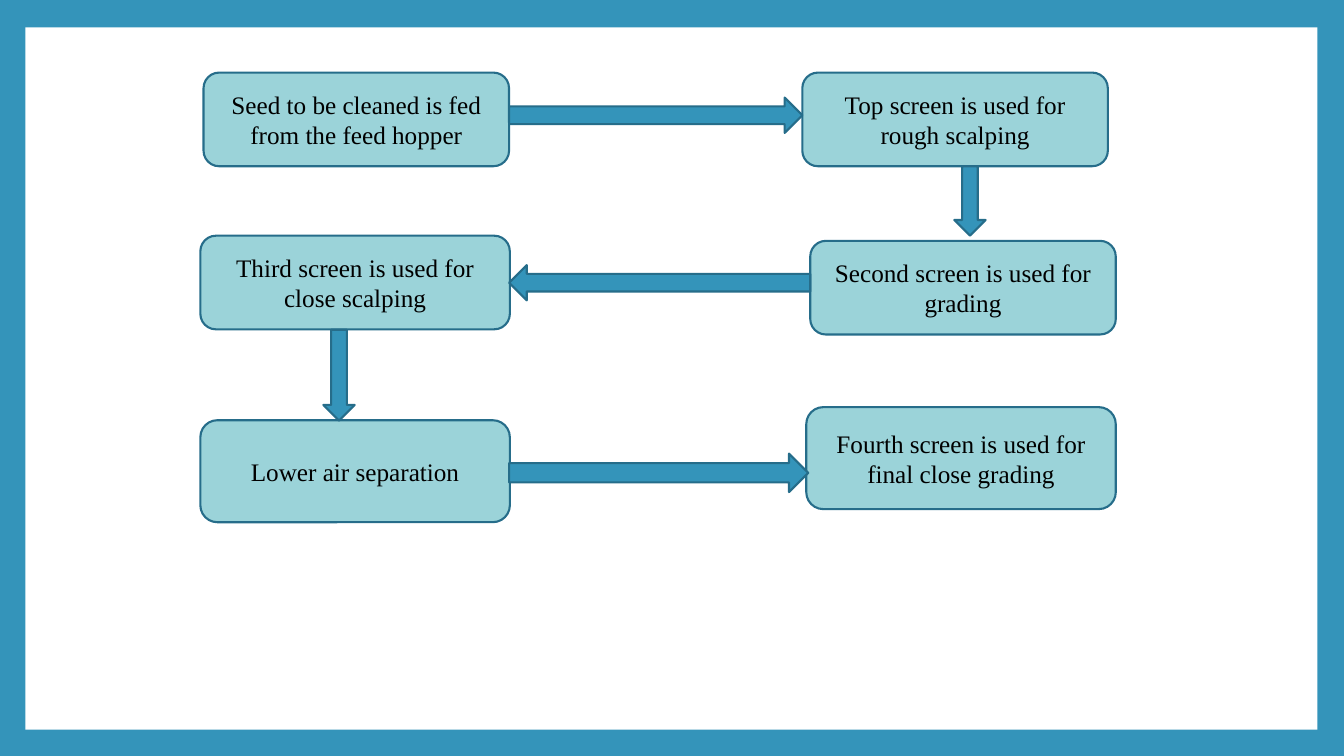
from dataclasses import dataclass

from pptx import Presentation
from pptx.dml.color import RGBColor
from pptx.enum.shapes import MSO_SHAPE
from pptx.enum.text import MSO_ANCHOR, PP_ALIGN
from pptx.util import Cm, Pt

RECTANGLE = MSO_SHAPE.RECTANGLE
ROUNDED = MSO_SHAPE.ROUNDED_RECTANGLE
RIGHT = MSO_SHAPE.RIGHT_ARROW
LEFT = MSO_SHAPE.LEFT_ARROW
DOWN = MSO_SHAPE.DOWN_ARROW
MIDDLE = MSO_ANCHOR.MIDDLE
CENTER = PP_ALIGN.CENTER


@dataclass(frozen=True)
class Theme:
    frame: RGBColor = RGBColor(0x34, 0x94, 0xBA)
    panel: RGBColor = RGBColor(0xFF, 0xFF, 0xFF)
    step: RGBColor = RGBColor(0x9B, 0xD3, 0xD9)
    outline: RGBColor = RGBColor(0x26, 0x6D, 0x8A)
    text: RGBColor = RGBColor(0, 0, 0)
    font: str = "Times New Roman"
    text_size: Pt = Pt(18)
    line_width: Pt = Pt(1.5)


THEME = Theme()

# Steps in process order: text, then left, top, width, height in cm
STEPS = [
    ("Seed to be cleaned is fed from the feed hopper", (5.13, 1.83, 7.7, 2.36)),
    ("Top screen is used for rough scalping", (20.22, 1.83, 7.7, 2.36)),
    ("Second screen is used for grading", (20.42, 6.07, 7.7, 2.36)),
    ("Third screen is used for close scalping", (5.05, 5.94, 7.8, 2.36)),
    ("Lower air separation", (5.05, 10.59, 7.8, 2.57)),
    ("Fourth screen is used for final close grading", (20.32, 10.26, 7.8, 2.57)),
]

# Block arrows between consecutive steps
ARROWS = [
    (RIGHT, (12.83, 2.46, 7.39, 0.89)),
    (DOWN, (24.05, 4.19, 0.79, 1.75)),
    (LEFT, (12.83, 6.68, 7.59, 0.89)),
    (DOWN, (8.15, 8.31, 0.79, 2.29)),
    (RIGHT, (12.83, 11.43, 7.54, 0.97)),
]


def add_block(page, kind, bounds, fill, outlined=True):
    block = page.shapes.add_shape(kind, *(Cm(length) for length in bounds))
    block.shadow.inherit = False
    block.fill.solid()
    block.fill.fore_color.rgb = fill
    if outlined:
        block.line.color.rgb = THEME.outline
        block.line.width = THEME.line_width
    else:
        block.line.fill.background()
    return block


def add_step(page, text, bounds):
    box = add_block(page, ROUNDED, bounds, THEME.step)
    frame = box.text_frame
    frame.word_wrap = True
    frame.vertical_anchor = MIDDLE
    frame.text = text
    para = frame.paragraphs[0]
    para.alignment = CENTER
    span = para.runs[0]
    span.font.name = THEME.font
    span.font.size = THEME.text_size
    span.font.color.rgb = THEME.text


def main():
    deck = Presentation()
    deck.slide_width, deck.slide_height = Cm(33.87), Cm(19.05)
    page = deck.slides.add_slide(deck.slide_layouts[6])

    # Coloured frame around a white panel
    page.background.fill.solid()
    page.background.fill.fore_color.rgb = THEME.frame
    add_block(page, RECTANGLE, (0.64, 0.69, 32.56, 17.7), THEME.panel, outlined=False)

    # Process flow
    for text, bounds in STEPS:
        add_step(page, text, bounds)
    for kind, bounds in ARROWS:
        add_block(page, kind, bounds, THEME.frame)

    deck.save("out.pptx")


if __name__ == "__main__":
    main()
